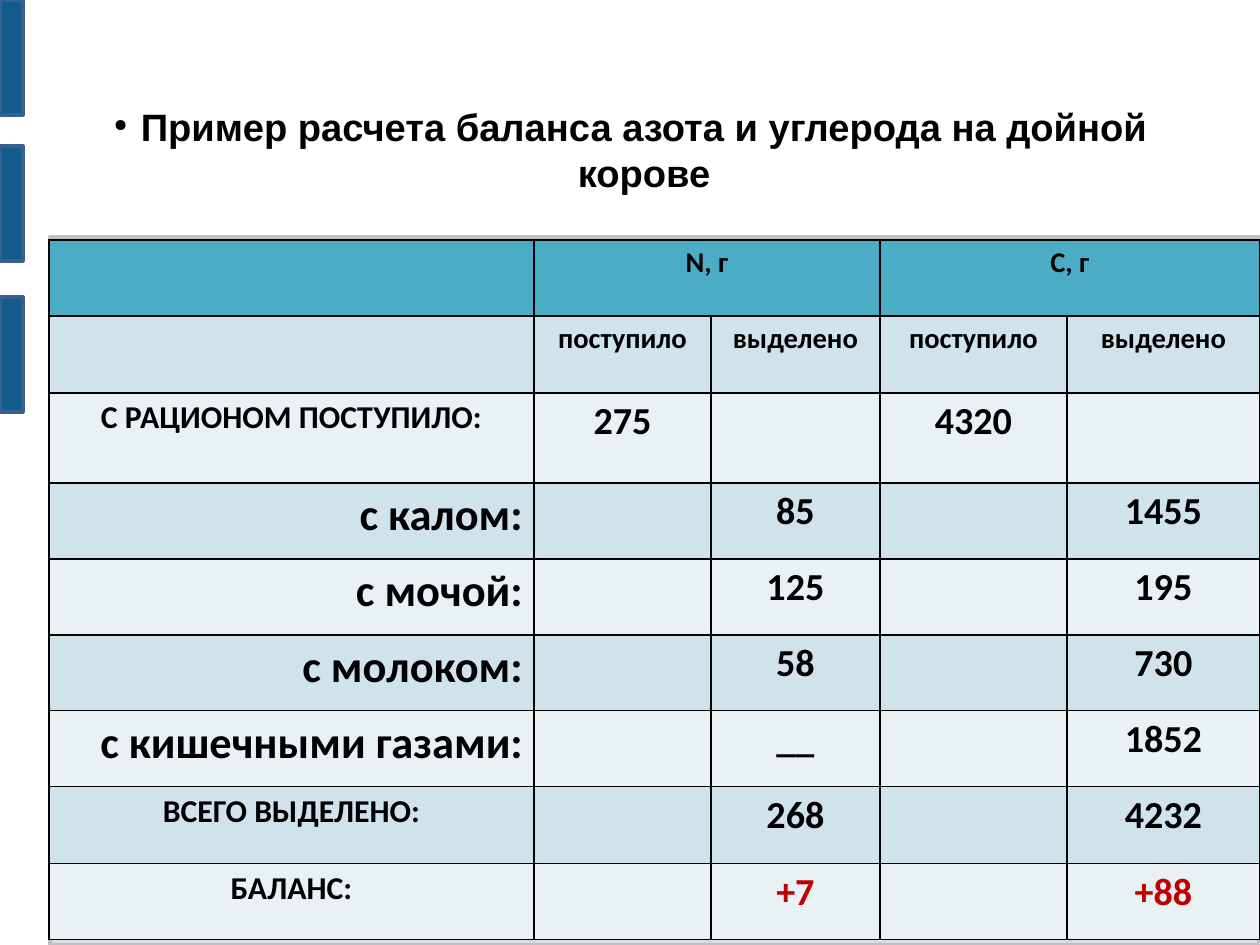
from lxml import etree
from pptx import Presentation
from pptx.dml.color import RGBColor
from pptx.enum.shapes import MSO_SHAPE
from pptx.enum.text import MSO_ANCHOR, PP_ALIGN
from pptx.oxml.ns import qn
from pptx.util import Pt

PX = 8000
RECTANGLE = MSO_SHAPE.RECTANGLE
MIDDLE = MSO_ANCHOR.MIDDLE
CENTER, RIGHT = PP_ALIGN.CENTER, PP_ALIGN.RIGHT
HEADER, DARK_BAND, LIGHT_BAND = "4BACC6", "D0E3EA", "E9F1F5"
BLACK, RED = "000000", "C00000"


def color(value):
    return RGBColor.from_string(value)


def write(frame, text, size=24, font="Calibri", fill=BLACK, align=CENTER):
    paragraph = frame.paragraphs[0]
    paragraph.alignment = align
    run = paragraph.add_run()
    run.text = text
    run.font.size = Pt(size)
    run.font.name = font
    run.font.bold = True
    run.font.color.rgb = color(fill)
    return paragraph


presentation = Presentation()
presentation.slide_width = 1260 * PX
presentation.slide_height = 945 * PX
slide = presentation.slides.add_slide(presentation.slide_layouts[6])

# Frame behind the table and bars on the left edge
rectangles = [(50, 237, 1209, 708, "DDDDDD", "C0C0C0")]
rectangles += [(0, top, 23, 115, "125C8D", "3A5F8C") for top in (0, 146, 297)]
for left, top, width, height, fill, outline in rectangles:
    shape = slide.shapes.add_shape(
        RECTANGLE, left * PX, top * PX, width * PX, height * PX)
    shape.shadow.inherit = False
    shape.fill.solid()
    shape.fill.fore_color.rgb = color(fill)
    shape.line.color.rgb = color(outline)
    shape.line.width = Pt(2)

# Bulleted title
title = slide.shapes.add_textbox(93 * PX, 70 * PX, 1075 * PX, 158 * PX)
frame = title.text_frame
frame.word_wrap = True
frame.vertical_anchor = MIDDLE
frame.margin_left = frame.margin_right = frame.margin_top = frame.margin_bottom = 0
paragraph = write(
    frame, "Пример расчета баланса азота и углерода на дойной корове", font="Arial")
properties = paragraph._p.get_or_add_pPr()
properties.set("marL", str(27 * PX))
properties.set("indent", str(-27 * PX))
etree.SubElement(properties, qn("a:buSzPct"), val="45000")
etree.SubElement(properties, qn("a:buChar"), char="●")

# Balance table: row label, then intake and output of N and C
rows = [
    ("", "N, г", "", "C, г", ""),
    ("", "поступило", "выделено", "поступило", "выделено"),
    ("С РАЦИОНОМ ПОСТУПИЛО:", "275", "", "4320", ""),
    ("с калом:", "", "85", "", "1455"),
    ("с мочой:", "", "125", "", "195"),
    ("с молоком:", "", "58", "", "730"),
    ("с кишечными газами:", "", "__", "", "1852"),
    ("ВСЕГО ВЫДЕЛЕНО:", "", "268", "", "4232"),
    ("БАЛАНС:", "", "+7", "", "+88"),
]
column_edges = [49, 534, 711, 880, 1067, 1260]
row_edges = [240, 316, 393, 483, 559, 635, 711, 787, 864, 940]
table = slide.shapes.add_table(
    len(rows), len(rows[0]), column_edges[0] * PX, row_edges[0] * PX,
    (column_edges[-1] - column_edges[0]) * PX,
    (row_edges[-1] - row_edges[0]) * PX).table
for column, start, end in zip(table.columns, column_edges, column_edges[1:]):
    column.width = (end - start) * PX
for row, start, end in zip(table.rows, row_edges, row_edges[1:]):
    row.height = (end - start) * PX
for first in (1, 3):
    table.cell(0, first).merge(table.cell(0, first + 1))

for row_index, texts in enumerate(rows):
    band = HEADER if row_index == 0 else DARK_BAND if row_index % 2 else LIGHT_BAND
    for column_index, text in enumerate(texts):
        cell = table.cell(row_index, column_index)

        # Borders come before the fill in the cell properties
        cell_properties = cell._tc.get_or_add_tcPr()
        for side in ("a:lnL", "a:lnR", "a:lnT", "a:lnB"):
            border = etree.SubElement(cell_properties, qn(side), w=str(Pt(1)))
            solid = etree.SubElement(border, qn("a:solidFill"))
            etree.SubElement(solid, qn("a:srgbClr"), val=BLACK)
        cell.fill.solid()
        cell.fill.fore_color.rgb = color(band)

        if not text:
            continue
        is_source = column_index == 0 and text.startswith("с ")
        if row_index < 2:
            size = 18
        elif column_index == 0:
            size = 28 if is_source else 20
        else:
            size = 24
        write(cell.text_frame, text, size=size,
              fill=RED if text.startswith("+") else BLACK,
              align=RIGHT if is_source else CENTER)

presentation.save("out.pptx")
